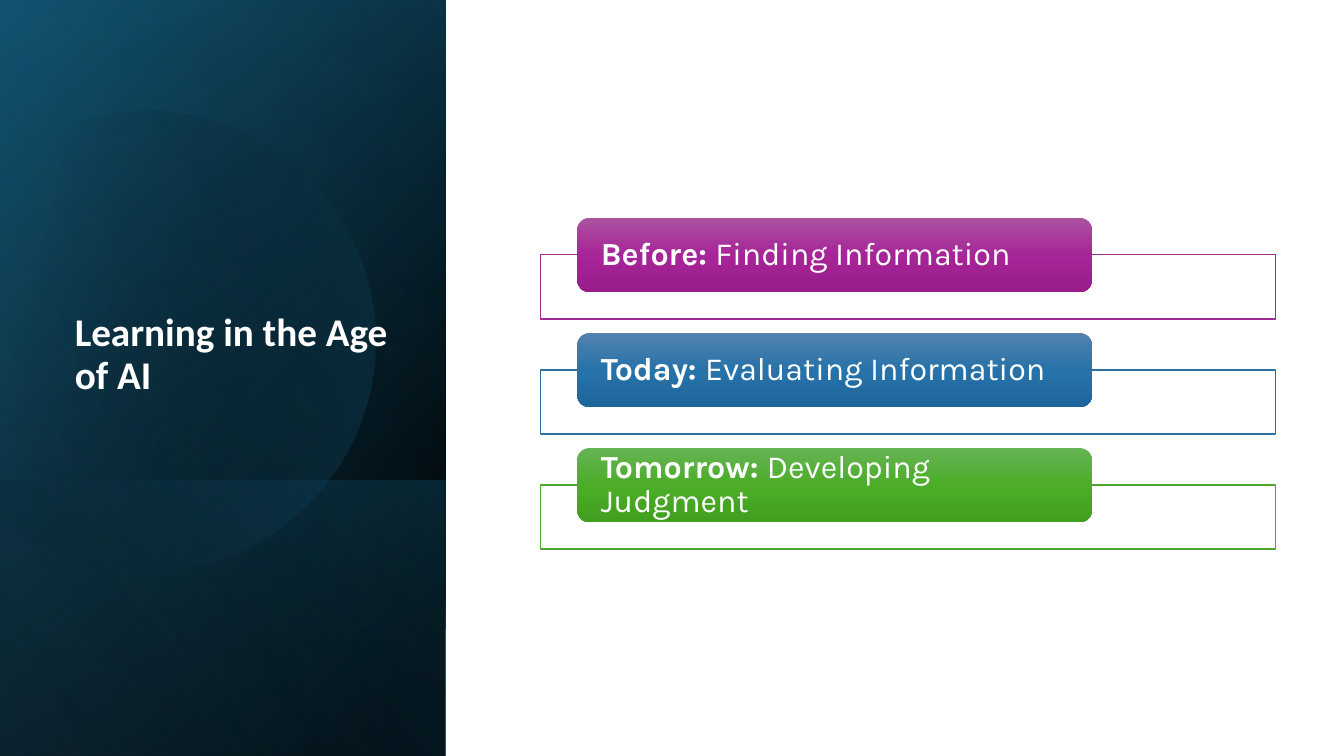
import pptx
import pptx.util
import pptx.oxml
import pptx.oxml.ns
import pptx.dml.color
import pptx.enum.shapes
import pptx.enum.text

Cm = pptx.util.Cm
Pt = pptx.util.Pt
RGBColor = pptx.dml.color.RGBColor
MSO_SHAPE = pptx.enum.shapes.MSO_SHAPE
MSO_ANCHOR = pptx.enum.text.MSO_ANCHOR
qn = pptx.oxml.ns.qn

WHITE = RGBColor(0xFF, 0xFF, 0xFF)
BLACK = RGBColor(0x00, 0x00, 0x00)
NAVY = RGBColor(0x10, 0x48, 0x62)
TEAL = RGBColor(0x15, 0x60, 0x82)
SKY = RGBColor(0x46, 0xB1, 0xE1)
PURPLE = RGBColor(0xA0, 0x2B, 0x93)
PURPLE_TOP = RGBColor(0xAC, 0x53, 0xA0)
PURPLE_MID = RGBColor(0xA6, 0x25, 0x98)
PURPLE_END = RGBColor(0x99, 0x1C, 0x8B)
BLUE = RGBColor(0x2C, 0x71, 0xA4)
BLUE_TOP = RGBColor(0x53, 0x82, 0xAF)
BLUE_MID = RGBColor(0x27, 0x72, 0xA9)
BLUE_END = RGBColor(0x1D, 0x66, 0x9C)
GREEN = RGBColor(0x4E, 0xA7, 0x2E)
GREEN_TOP = RGBColor(0x66, 0xB3, 0x54)
GREEN_MID = RGBColor(0x4B, 0xAD, 0x28)
GREEN_END = RGBColor(0x40, 0x9F, 0x1E)


def set_gradient(sp, stops, angle):
    gs = "".join(
        f'<a:gs pos="{pos * 1000}"><a:srgbClr val="{color}">'
        f'<a:alpha val="{alpha * 1000}"/></a:srgbClr></a:gs>'
        for pos, color, alpha in stops
    )
    grad = pptx.oxml.parse_xml(
        f'<a:gradFill {pptx.oxml.ns.nsdecls("a")} rotWithShape="1">'
        f'<a:gsLst>{gs}</a:gsLst><a:lin ang="{angle * 60000}" scaled="0"/></a:gradFill>'
    )
    sp.fill.background()
    spPr = sp.element.spPr
    spPr.replace(spPr.find(qn("a:noFill")), grad)
    sp.line.fill.background()
    sp.shadow.inherit = False


def add_panel_layer(top, height, stops, angle):
    left = (PANEL_W - height) / 2
    sp = s.shapes.add_shape(
        MSO_SHAPE.RECTANGLE, Cm(left), Cm(top - left), Cm(height), Cm(PANEL_W)
    )
    sp.rotation = 90
    sp.element.spPr.find(qn("a:xfrm")).set("flipH", "1")
    set_gradient(sp, stops, angle)


SLIDE_H = 19.05
PANEL_W = 11.23

prs = pptx.Presentation()
prs.slide_width = Cm(33.87)
prs.slide_height = Cm(SLIDE_H)
s = prs.slides.add_slide(prs.slide_layouts[5])

add_panel_layer(0, SLIDE_H, [(8, BLACK, 100), (100, NAVY, 100)], 50)
add_panel_layer(0, SLIDE_H, [(0, BLACK, 0), (99, TEAL, 46)], 30)
add_panel_layer(12.1, 6.95, [(2, TEAL, 29), (100, BLACK, 30)], 130)

DISC_LEFT, DISC_TOP = -1.4, 2.69
DISC_START = (6.78, 0.25)
DISC_SEGMENTS = [
    [(9.12, 0.99), (10.85, 3.2), (10.85, 5.8)],
    [(10.85, 9.02), (8.23, 11.61), (5.03, 11.61)],
    [(3.02, 11.61), (1.24, 10.59), (0.23, 9.04)],
    [(0, 8.69)],
    [(2.31, 0.69)],
    [(2.77, 0.46)],
    [(3.48, 0.15), (4.22, 0), (5.03, 0)],
    [(5.64, 0), (6.22, 0.1), DISC_START],
]
builder = s.shapes.build_freeform(Cm(DISC_START[0]), Cm(DISC_START[1]))
builder.add_line_segments(
    [(Cm(x), Cm(y)) for segment in DISC_SEGMENTS for x, y in segment], close=True
)
disc = builder.convert_to_shape(Cm(DISC_LEFT), Cm(DISC_TOP))
disc.left, disc.top = Cm(DISC_LEFT), Cm(DISC_TOP)
lines = iter(list(disc.element.spPr.iter(qn("a:lnTo"))))
for segment in DISC_SEGMENTS:
    group = [next(lines) for point in segment]
    if len(group) == 3:
        group[0].tag = qn("a:cubicBezTo")
        for line in group[1:]:
            group[0].append(line[0])
            line.getparent().remove(line)
disc.rotation = 343.9
set_gradient(disc, [(29, BLACK, 0), (100, TEAL, 43)], 30)

add_panel_layer(0, SLIDE_H, [(0, BLACK, 0), (99, SKY, 11)], 120)

title = s.shapes.title
title.left, title.top, title.width, title.height = Cm(1.63), Cm(4.67), Cm(8.66), Cm(6.65)
s.shapes.element.append(title.element)
tf = title.text_frame
tf.text = "Learning in the Age of AI"
tf.word_wrap = True
tf.auto_size = pptx.enum.text.MSO_AUTO_SIZE.NONE
tf.vertical_anchor = MSO_ANCHOR.BOTTOM
tf.margin_bottom = Cm(1.3)
p = tf.paragraphs[0]
p.alignment = pptx.enum.text.PP_ALIGN.LEFT
p.line_spacing = 0.9
font = p.runs[0].font
font.name, font.size, font.bold = "Calibri", Pt(28), True
font.color.rgb = WHITE

STAGES = [
    ("Before: ", "Finding Information", PURPLE, (PURPLE_TOP, PURPLE_MID, PURPLE_END)),
    ("Today: ", "Evaluating Information", BLUE, (BLUE_TOP, BLUE_MID, BLUE_END)),
    ("Tomorrow: ", "Developing Judgment", GREEN, (GREEN_TOP, GREEN_MID, GREEN_END)),
]
STAGE_TOP, STAGE_STEP = 5.49, 2.9

for i, (when, skill, outline, shades) in enumerate(STAGES):
    top = STAGE_TOP + i * STAGE_STEP
    frame = s.shapes.add_shape(
        MSO_SHAPE.RECTANGLE, Cm(13.62), Cm(top + 0.93), Cm(18.52), Cm(1.62)
    )
    frame.fill.solid()
    frame.fill.fore_color.rgb = WHITE
    frame.line.color.rgb = outline
    frame.line.width = Pt(1)
    frame.shadow.inherit = False

    tab = s.shapes.add_shape(
        MSO_SHAPE.ROUNDED_RECTANGLE, Cm(14.55), Cm(top), Cm(12.97), Cm(1.87)
    )
    set_gradient(tab, [(pos, shade, 100) for pos, shade in zip((0, 50, 100), shades)], 90)
    tf = tab.text_frame
    tf.word_wrap = True
    tf.vertical_anchor = MSO_ANCHOR.MIDDLE
    tf.margin_left = tf.margin_right = Cm(0.5)
    tf.margin_top = tf.margin_bottom = 0
    p = tf.paragraphs[0]
    p.alignment = pptx.enum.text.PP_ALIGN.LEFT
    p.line_spacing = 0.9
    for text, bold in ((when, True), (skill, False)):
        r = p.add_run()
        r.text = text
        r.font.name, r.font.size, r.font.bold = "Karla", Pt(23), bold
        r.font.color.rgb = WHITE

prs.save("out.pptx")
